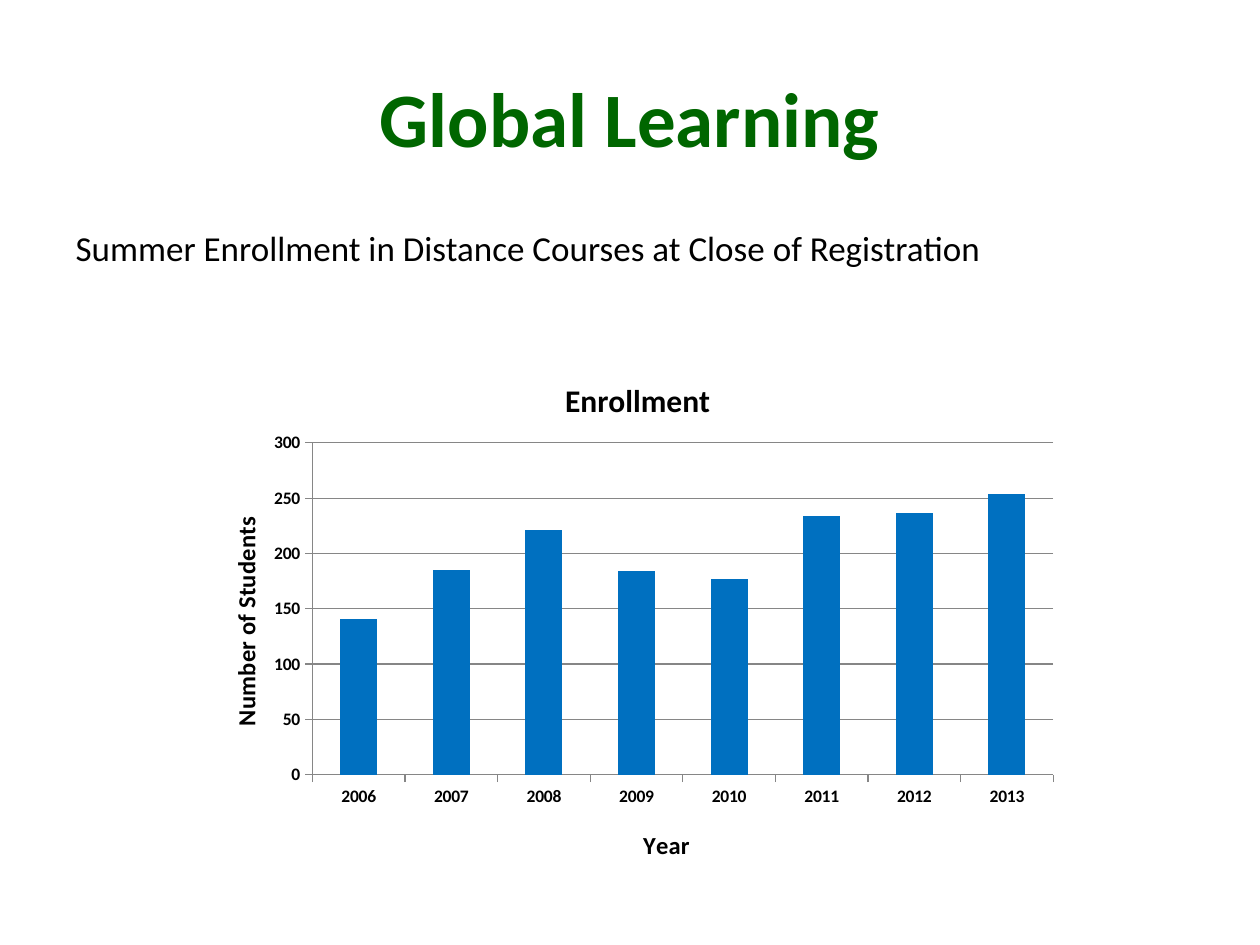
from lxml import etree
from pptx import Presentation
from pptx.chart.data import CategoryChartData
from pptx.dml.color import RGBColor
from pptx.enum.chart import XL_CHART_TYPE, XL_TICK_MARK
from pptx.enum.text import MSO_ANCHOR, PP_ALIGN
from pptx.oxml.ns import qn
from pptx.util import Pt

COLUMN = XL_CHART_TYPE.COLUMN_CLUSTERED
OUT, NONE = XL_TICK_MARK.OUTSIDE, XL_TICK_MARK.NONE
LEFT, CENTER, MIDDLE = PP_ALIGN.LEFT, PP_ALIGN.CENTER, MSO_ANCHOR.MIDDLE

FONT = "Calibri"
BLACK, GREEN, BLUE, GRAY = "000000", "006600", "0070C0", "868686"
TITLE = "Global Learning"
BODY = "Summer Enrollment in Distance Courses at Close of Registration"
NAME, YEAR, COUNT = "Enrollment", "Year", "Number of Students"
DATA = {"2006": 141, "2007": 185, "2008": 221, "2009": 184,
        "2010": 177, "2011": 234, "2012": 237, "2013": 254}


def color(code):
    return RGBColor.from_string(code)


def style(font, size, bold=False, tint=BLACK):
    font.name, font.size, font.bold = FONT, Pt(size), bold
    font.color.rgb = color(tint)


def write(frame, text, size, align=None, **look):
    frame.text = text
    para = frame.paragraphs[0]
    if align is not None:
        para.alignment = align
    style(para.runs[0].font, size, **look)


def move(shape, left, top, width, height):
    shape.left, shape.top = Pt(left), Pt(top)
    shape.width, shape.height = Pt(width), Pt(height)


def place(node, index, **parts):
    for old in node.findall(qn("c:layout")):
        node.remove(old)
    layout = etree.Element(qn("c:layout"))
    manual = etree.SubElement(layout, qn("c:manualLayout"))
    for tag, val in parts.items():
        etree.SubElement(manual, qn("c:" + tag), val=str(val))
    node.insert(index, layout)


def label(owner, text, size, x, y):
    title = owner.chart_title if hasattr(owner, "chart_title") else owner.axis_title
    write(title.text_frame, text, size, bold=True)
    place(title._element, 1, xMode="edge", yMode="edge", x=x, y=y)


def add_chart(slide):
    data = CategoryChartData()
    data.categories = list(DATA)
    data.add_series(NAME, list(DATA.values()))
    box = [Pt(n) for n in (108, 198, 504, 306)]
    chart = slide.shapes.add_chart(COLUMN, *box, data).chart
    style(chart.font, 10)
    chart.has_legend = False
    label(chart, NAME, 18, 0.42, 0.05)

    plot = chart.plots[0]
    plot.gap_width, plot.vary_by_categories = 150, False
    fill = plot.series[0].format.fill
    fill.solid()
    fill.fore_color.rgb = color(BLUE)

    years, counts = chart.category_axis, chart.value_axis
    label(years, YEAR, 14, 0.51, 0.89)
    label(counts, COUNT, 14, 0.04, 0.31)
    counts.minimum_scale, counts.maximum_scale, counts.major_unit = 0, 300, 50
    counts.has_major_gridlines = True
    for axis in (years, counts):
        axis.major_tick_mark, axis.minor_tick_mark = OUT, NONE
        style(axis.tick_labels.font, 10, bold=True)
    for part in (years, counts, counts.major_gridlines):
        part.format.line.color.rgb = color(GRAY)
        part.format.line.width = Pt(0.75)

    area = chart._chartSpace.find(".//" + qn("c:plotArea"))
    place(area, 0, layoutTarget="inner", xMode="edge", yMode="edge",
          x=0.14, y=0.18, w=0.84, h=0.62)


def main():
    """Build the summer enrollment slide."""
    deck = Presentation()
    deck.slide_width, deck.slide_height = Pt(720), Pt(540)
    slide = deck.slides.add_slide(deck.slide_layouts[1])

    title, body = slide.placeholders
    move(title, 36, 21.6, 648, 90)
    title.text_frame.vertical_anchor = MIDDLE
    write(title.text_frame, TITLE, 44, CENTER, bold=True, tint=GREEN)

    move(body, 36, 126, 648, 356.4)
    write(body.text_frame, BODY, 20, LEFT)
    props = body.text_frame.paragraphs[0]._p.get_or_add_pPr()
    props.set("marL", "0")
    props.set("indent", "0")
    etree.SubElement(props, qn("a:buNone"))

    add_chart(slide)
    deck.save("out.pptx")


if __name__ == "__main__":
    main()
